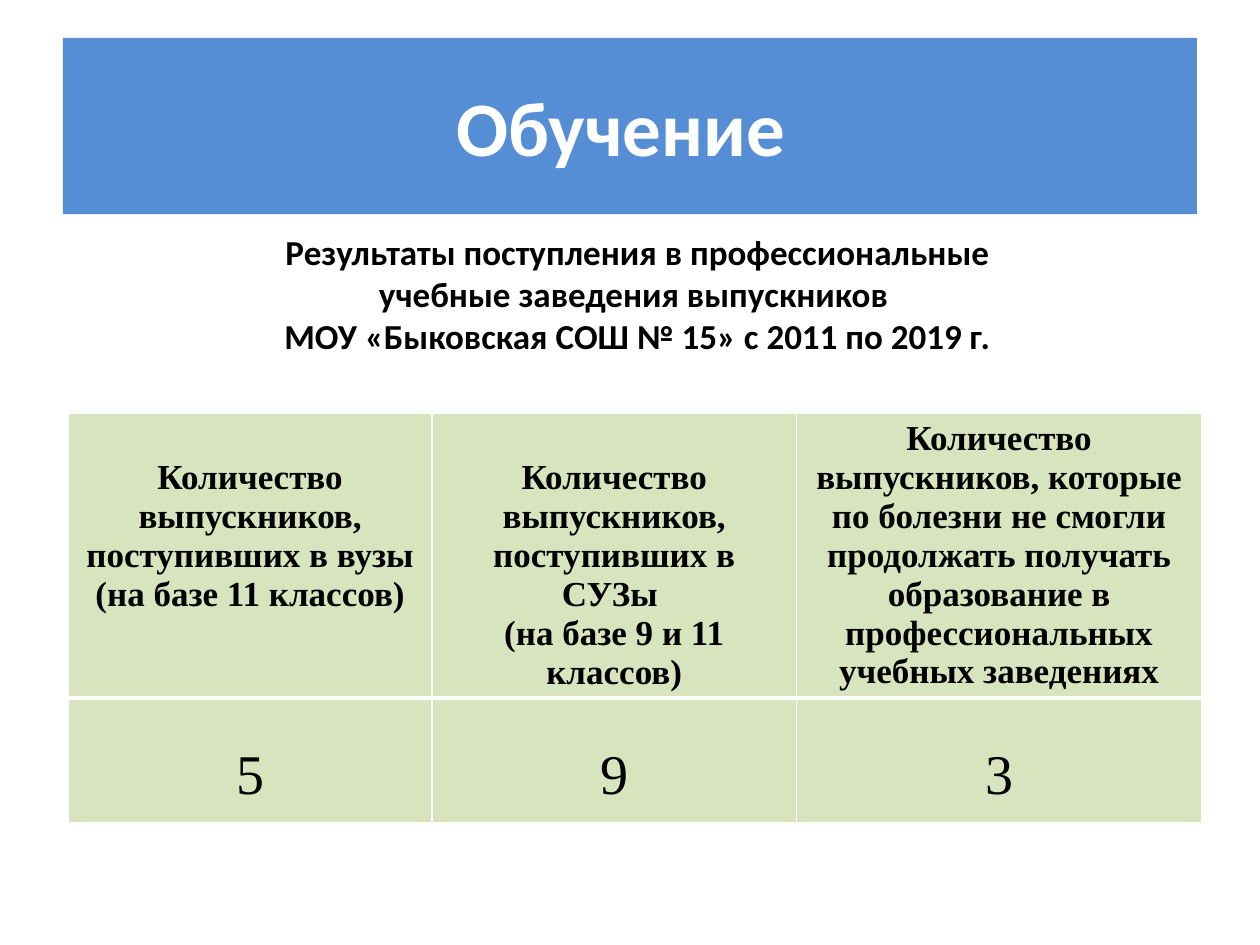
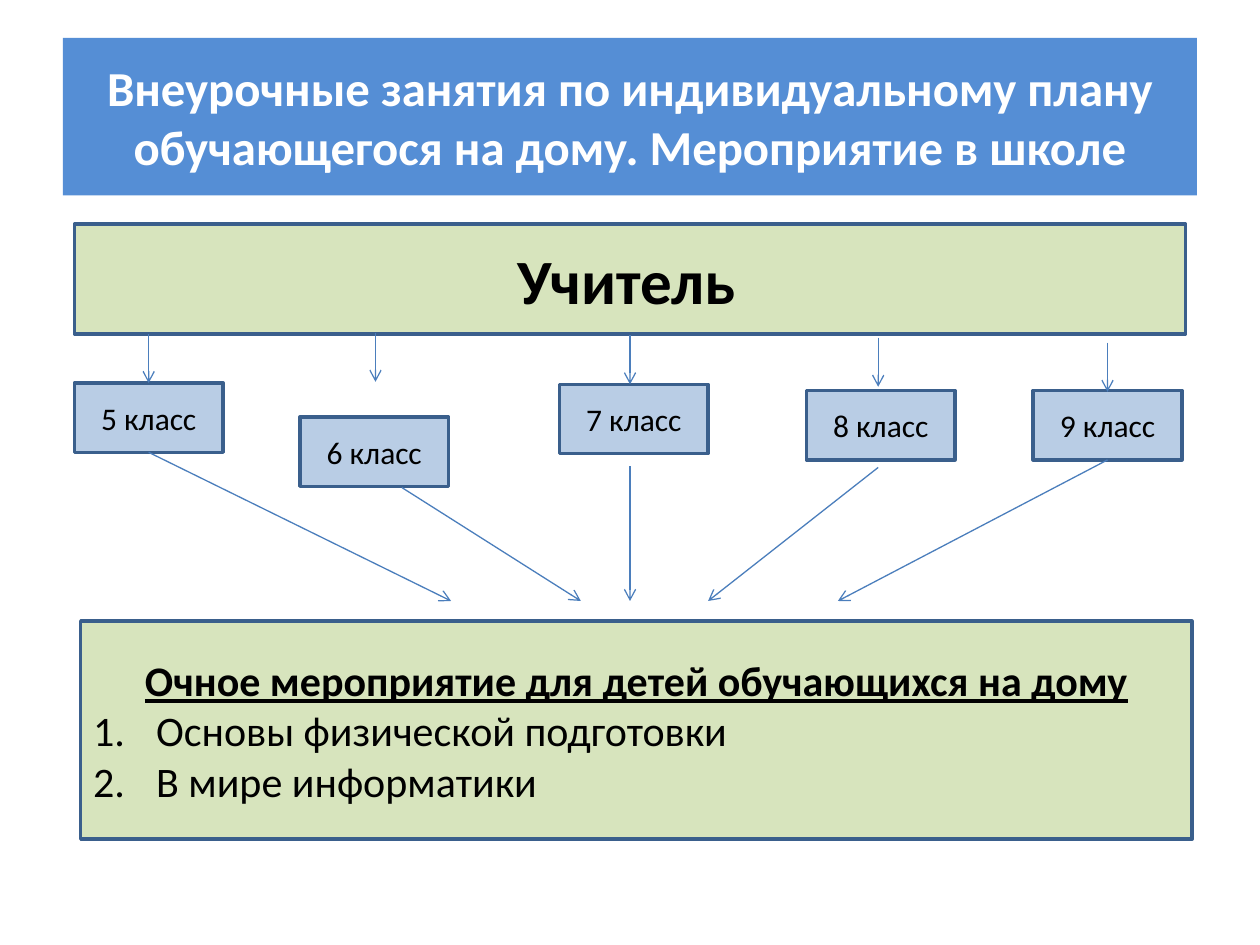
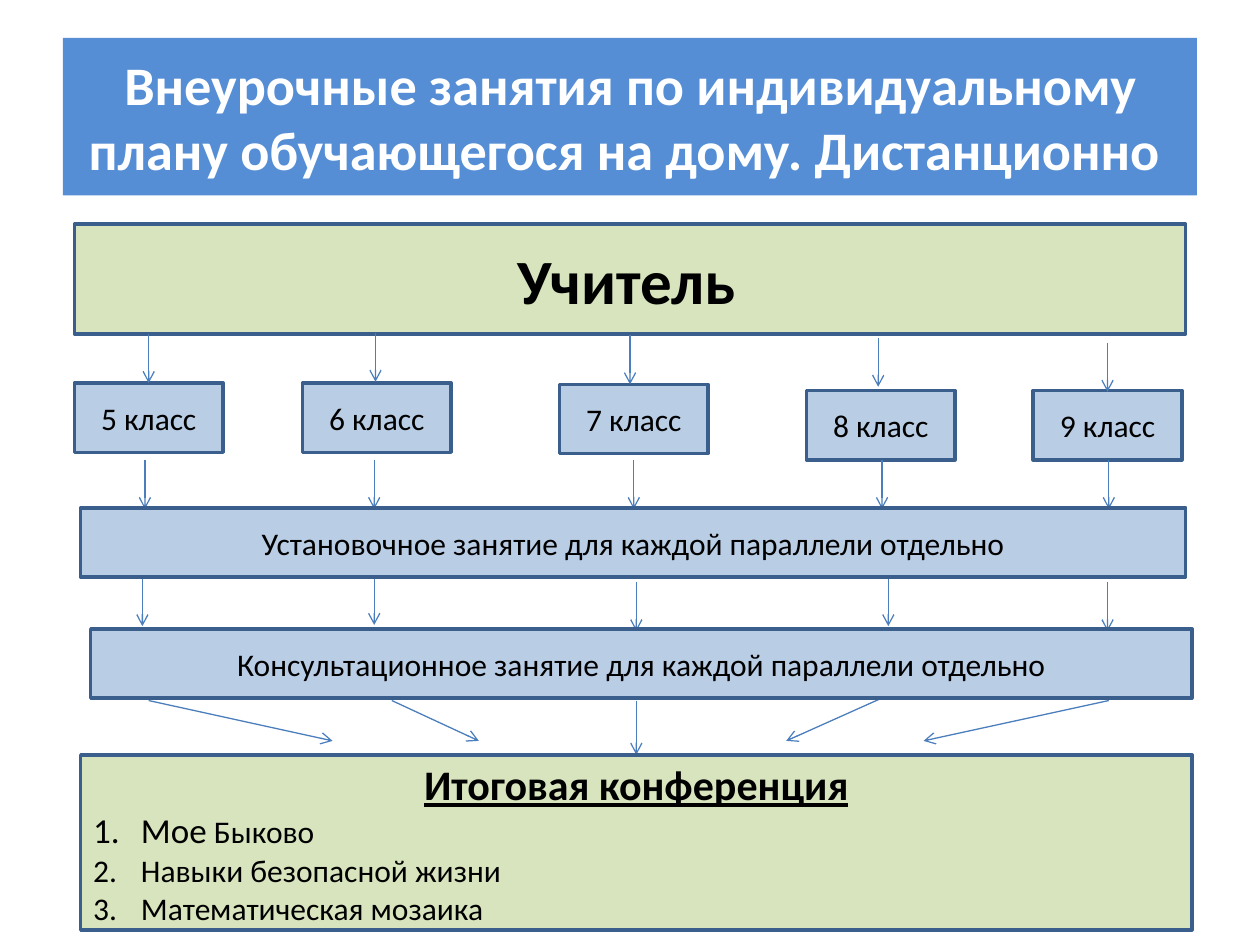
"""Build three slides on results and extracurricular work for pupils taught at home."""
from dataclasses import dataclass

from lxml.etree import SubElement
from pptx import Presentation
from pptx.dml.color import RGBColor
from pptx.enum.shapes import MSO_CONNECTOR, MSO_SHAPE
from pptx.enum.text import MSO_ANCHOR, PP_ALIGN
from pptx.oxml.ns import qn
from pptx.util import Inches, Pt


@dataclass(frozen=True)
class Theme:
    """Colours, fonts and sizes shared by the slides."""
    band: str = "558ED5"
    green: str = "D7E4BD"
    blue: str = "B9CDE5"
    outline: str = "3A5F8C"
    arrow: str = "4B7EBC"
    white: str = "FFFFFF"
    black: str = "000000"
    font: str = "Calibri"
    table_font: str = "Times New Roman"
    body: float = 18
    subtitle: float = 20
    heading: float = 24
    value: float = 32
    teacher: float = 36
    outline_width: float = 2
    arrow_width: float = 0.75


THEME = Theme()

RESULTS_TITLE = "Обучение "
RESULTS_SUBTITLE = (
    "Результаты поступления в профессиональные учебные заведения выпускников \n"
    "МОУ «Быковская СОШ № 15» с 2011 по 2019 г."
)
RESULTS = [
    (["Количество выпускников, поступивших в вузы", "(на базе 11 классов)"], "5", 2.89, 0.36),
    (["Количество выпускников, поступивших в СУЗы ", "(на базе 9 и 11 классов)"], "9", 2.89, 0.36),
    (["Количество выпускников, которые по болезни не смогли продолжать получать "
      "образование в профессиональных учебных заведениях"], "3", 3.22, 0.05),
]
ROW_HEIGHTS = (2.2, 0.99)

TEACHER = [("Учитель", THEME.teacher), (" ", THEME.body)]
CLASSES = ["5 класс", "6 класс", "7 класс", "8 класс", "9 класс"]
CLASS_SIZE = (1.18, 0.55)
TEACHER_ARROWS = [(1.18, 2.65), (2.98, 2.64), (5, 2.66), (6.97, 2.68), (8.79, 2.72)]
ARROW_LENGTH = 0.39

SCHOOL = {
    "title": "Внеурочные занятия по индивидуальному плану обучающегося на дому. Мероприятие в школе",
    "title_size": 27.9,
    "class_places": [(0.59, 3.04), (2.38, 3.31), (4.44, 3.05), (6.4, 3.1), (8.2, 3.1)],
    "drops": [],
    "steps": [],
    "converging": [(1.18, 3.59, 3.58), (3.19, 3.87, 4.61), (5, 3.7, 5),
                   (6.97, 3.71, 5.62), (8.79, 3.65, 6.65)],
    "converging_ends": [4.77] * 5,
    "result": (0.64, 4.93, 8.82, 1.73),
    "heading": "Очное мероприятие для детей обучающихся на дому",
    "items": ["Основы физической подготовки", "В мире информатики"],
    "item_size": THEME.heading,
    "indent": 0.5,
}
REMOTE = {
    "title": "Внеурочные занятия по индивидуальному плану обучающегося на дому. Дистанционно ",
    "title_size": 31,
    "class_places": [(0.59, 3.04), (2.4, 3.04), (4.44, 3.05), (6.4, 3.1), (8.2, 3.1)],
    "drops": [(1.15, 3.65), (2.97, 3.65), (5.03, 3.65), (7, 3.65), (8.8, 3.65),
              (1.13, 4.58), (2.97, 4.57), (5.05, 4.62), (7.05, 4.58), (8.79, 4.62)],
    "steps": [("Установочное занятие для каждой параллели отдельно", (0.64, 4.03, 8.77, 0.55)),
              ("Консультационное занятие для каждой параллели отдельно", (0.72, 4.99, 8.74, 0.55))],
    "converging": [(1.18, 5.56, 2.64), (3.11, 5.56, 3.8), (5.05, 5.56, 5.05),
                   (7, 5.54, 6.24), (8.8, 5.56, 7.33)],
    "converging_ends": [5.88, 5.88, 5.99, 5.88, 5.88],
    "result": (0.64, 5.99, 8.82, 1.39),
    "heading": "Итоговая конференция",
    "items": [[("Мое", 20), (" Быково", THEME.body)],
              "Навыки безопасной жизни", "Математическая мозаика"],
    "item_size": THEME.body,
    "indent": 0.38,
}


def color(value):
    return RGBColor.from_string(value)


def write_text(frame, text, size=THEME.body, font=THEME.font, fill=THEME.black, bold=False,
               underline=False, align=PP_ALIGN.CENTER, spacing=None, number_indent=None):
    """Add one paragraph, given as a string or as (text, size) spans."""
    para = frame.add_paragraph() if frame.text else frame.paragraphs[0]
    para.alignment = align
    if spacing:
        para.line_spacing = spacing
    if number_indent:
        properties = para._p.get_or_add_pPr()
        properties.set("marL", str(Inches(number_indent)))
        properties.set("indent", str(-Inches(number_indent)))
        SubElement(properties, qn("a:buFont"), typeface="+mj-lt")
        SubElement(properties, qn("a:buAutoNum"), type="arabicPeriod")
    spans = [(text, size)] if isinstance(text, str) else text
    for words, span_size in spans:
        for index, line in enumerate(words.split("\n")):
            if index:
                para.add_line_break()
            span = para.add_run()
            span.text = line
            span.font.name = font
            span.font.size = Pt(span_size)
            span.font.bold = bold
            span.font.underline = underline
            span.font.color.rgb = color(fill)


def add_box(slide, place, fill, outline=THEME.outline):
    box = slide.shapes.add_shape(MSO_SHAPE.RECTANGLE, *map(Inches, place))
    box.shadow.inherit = False
    box.fill.solid()
    box.fill.fore_color.rgb = color(fill)
    if outline:
        box.line.color.rgb = color(outline)
        box.line.width = Pt(THEME.outline_width)
    else:
        box.line.fill.background()
    frame = box.text_frame
    frame.word_wrap = True
    frame.vertical_anchor = MSO_ANCHOR.MIDDLE
    return frame


def add_arrow(slide, start, end):
    arrow = slide.shapes.add_connector(MSO_CONNECTOR.STRAIGHT, *map(Inches, (*start, *end)))
    arrow.line.color.rgb = color(THEME.arrow)
    arrow.line.width = Pt(THEME.arrow_width)
    properties = arrow.element.spPr
    SubElement(properties.find(qn("a:ln")), qn("a:tailEnd"), type="arrow")
    SubElement(properties, qn("a:effectLst"))


def add_drops(slide, starts):
    for left, top in starts:
        add_arrow(slide, (left, top), (left, top + ARROW_LENGTH))


def add_titled_slide(deck, title, size, height):
    slide = deck.slides.add_slide(deck.slide_layouts[6])
    frame = add_box(slide, (0.5, 0.3, 9, height), THEME.band, outline=None)
    write_text(frame, title, size=size, fill=THEME.white, bold=True)
    return slide


def style_cell(cell, top_width, bottom_width):
    properties = cell._tc.get_or_add_tcPr()
    for side, width in (("L", 1), ("R", 1), ("T", top_width), ("B", bottom_width)):
        border = SubElement(properties, qn(f"a:ln{side}"), w=str(Pt(width)))
        SubElement(SubElement(border, qn("a:solidFill")), qn("a:srgbClr"), val=THEME.white)
    cell.fill.solid()
    cell.fill.fore_color.rgb = color(THEME.green)


def add_results_slide(deck):
    slide = add_titled_slide(deck, RESULTS_TITLE, 44, 1.4)
    widths = [result[2] for result in RESULTS]
    place = (0.54, 3.28, sum(widths), sum(ROW_HEIGHTS))
    table = slide.shapes.add_table(2, len(RESULTS), *map(Inches, place)).table
    for row, height in zip(table.rows, ROW_HEIGHTS):
        row.height = Inches(height)
    for index, (heading, value, width, margin) in enumerate(RESULTS):
        table.columns[index].width = Inches(width)
        head, body = table.cell(0, index), table.cell(1, index)
        style_cell(head, 1, 3)
        style_cell(body, 3, 1)
        head.margin_top = Inches(margin)
        body.vertical_anchor = MSO_ANCHOR.MIDDLE
        for text in heading:
            write_text(head.text_frame, text, size=THEME.subtitle, font=THEME.table_font, bold=True)
        write_text(body.text_frame, value, size=THEME.value, font=THEME.table_font, spacing=1.5)
    subtitle = slide.shapes.add_textbox(*map(Inches, (1.77, 1.78, 6.58, 1.57))).text_frame
    subtitle.word_wrap = True
    write_text(subtitle, RESULTS_SUBTITLE, size=THEME.subtitle, bold=True)


def add_plan_slide(deck, plan):
    slide = add_titled_slide(deck, plan["title"], plan["title_size"], 1.25)
    write_text(add_box(slide, (0.59, 1.78, 8.82, 0.87), THEME.green), TEACHER, bold=True)
    for name, place in zip(CLASSES, plan["class_places"]):
        write_text(add_box(slide, (*place, *CLASS_SIZE), THEME.blue), name)
    add_drops(slide, TEACHER_ARROWS + plan["drops"])
    for (left, top, end_left), end_top in zip(plan["converging"], plan["converging_ends"]):
        add_arrow(slide, (left, top), (end_left, end_top))
    for text, place in plan["steps"]:
        write_text(add_box(slide, place, THEME.blue), text)
    frame = add_box(slide, plan["result"], THEME.green)
    write_text(frame, plan["heading"], size=THEME.heading, bold=True, underline=True)
    for item in plan["items"]:
        write_text(frame, item, size=plan["item_size"], align=PP_ALIGN.LEFT,
                   number_indent=plan["indent"])


def main():
    deck = Presentation()
    deck.slide_width, deck.slide_height = Inches(10), Inches(7.5)
    add_results_slide(deck)
    for plan in (SCHOOL, REMOTE):
        add_plan_slide(deck, plan)
    deck.save("out.pptx")


if __name__ == "__main__":
    main()
